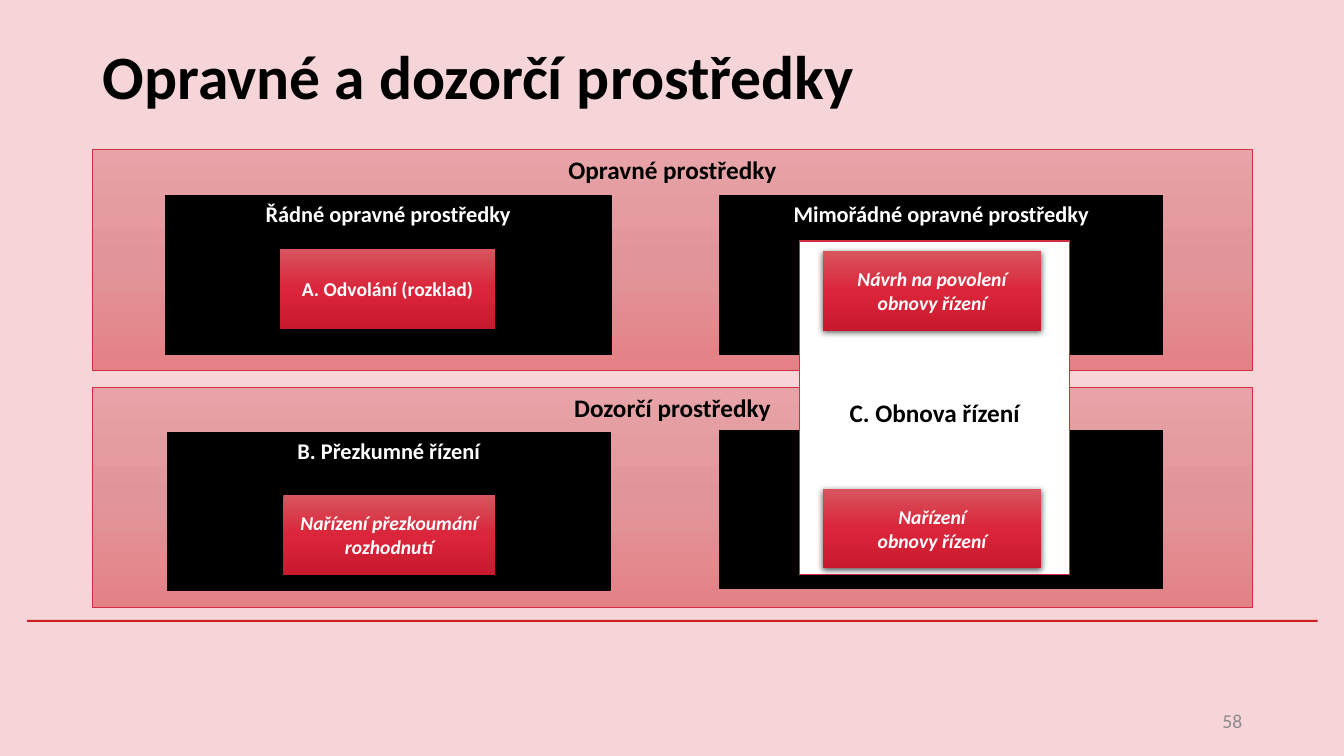
from copy import deepcopy

from lxml import etree
from pptx import Presentation
from pptx import util as u
from pptx.dml.color import RGBColor
from pptx.enum import shapes, text
from pptx.oxml import parse_xml
from pptx.oxml.ns import nsdecls, qn

COLORS = {
    "background": "F6D5D9",
    "rule": "CD1F21",
    "border": "D22D40",
    "black": "000000",
    "white": "FFFFFF",
    "number": "8C8C8C",
}
PANEL_STOPS = ("E7A3A7", "E29599", "E38186")
STEP_STOPS = ("D8555E", "DA253A", "C9192E")
PANEL_LEFT, PANEL_WIDTH, PANEL_HEIGHT = 0.92, 11.5, 2.19


def rgb(name):
    """Return the named colour."""
    return RGBColor.from_string(COLORS[name])


def inches(*lengths):
    """Convert plain numbers to lengths."""
    return [u.Inches(length) for length in lengths]


def write(shape, content, size=18, color="black", bold=True, italic=False,
          align=text.PP_ALIGN.CENTER, anchor=text.MSO_ANCHOR.TOP, wrap=True):
    """Fill a shape with formatted lines of text."""
    frame = shape.text_frame
    frame.word_wrap = wrap
    frame.vertical_anchor = anchor
    for index, line in enumerate(content.split("\n")):
        para = frame.add_paragraph() if index else frame.paragraphs[0]
        para.alignment = align
        span = para.add_run()
        span.text = line
        font = span.font
        font.name, font.size = "Calibri", u.Pt(size)
        font.bold, font.italic = bold, italic
        font.color.rgb = rgb(color)


def add_box(slide, place, fill, line=None, width=1):
    """Add a plain rectangle, optionally outlined."""
    box = slide.shapes.add_shape(shapes.MSO_SHAPE.RECTANGLE, *inches(*place))
    box.shadow.inherit = False
    box.fill.solid()
    box.fill.fore_color.rgb = rgb(fill)
    if line:
        box.line.color.rgb = rgb(line)
        box.line.width = u.Pt(width)
    else:
        box.line.fill.background()
    return box


def shade(box, stops):
    """Give a box a three-stop gradient running downwards."""
    box.fill.gradient()
    box.fill.gradient_angle = 270
    stop_list = box._element.spPr.find(".//" + qn("a:gsLst"))
    stop_list.insert(1, deepcopy(stop_list[0]))
    for index, (stop, color) in enumerate(zip(box.fill.gradient_stops, stops)):
        stop.position = index / 2
        stop.color.rgb = RGBColor.from_string(color)


def add_panel(slide, top, heading):
    """Add a wide pink panel with its heading."""
    place = (PANEL_LEFT, top, PANEL_WIDTH, PANEL_HEIGHT)
    panel = add_box(slide, place, "white", "border", 0.5)
    shade(panel, PANEL_STOPS)
    write(panel, heading)


def add_group(slide, place, heading=""):
    """Add a black box with an optional heading."""
    group = add_box(slide, place, "black", "black")
    if heading:
        write(group, heading, size=16, color="white")


def add_step(slide, left, top, width, label, italic=True):
    """Add a red box with a soft shadow below it."""
    step = add_box(slide, (left, top, width, 0.79), "rule")
    shade(step, STEP_STOPS)
    effects = step._element.spPr.find(qn("a:effectLst"))
    effects.append(parse_xml(
        f'<a:outerShdw {nsdecls("a")} blurRad="{u.Pt(4.5)}" dist="{u.Pt(1.5)}" '
        'dir="5400000" algn="ctr" rotWithShape="0"><a:srgbClr val="000000">'
        '<a:alpha val="63000"/></a:srgbClr></a:outerShdw>'))
    write(step, label, size=14, color="white", italic=italic,
          anchor=text.MSO_ANCHOR.MIDDLE, wrap=False)


def add_title(slide, content):
    """Place and format the title."""
    title = slide.shapes.title
    title.left, title.top, title.width, title.height = inches(0.92, 0.02, 11.5, 1.45)
    write(title, content, size=44, align=text.PP_ALIGN.LEFT,
          anchor=text.MSO_ANCHOR.MIDDLE)


def add_number(slide, content):
    """Add the slide number."""
    number = slide.shapes.add_textbox(*inches(9.42, 6.95, 3, 0.4))
    write(number, content, size=14, color="number", bold=False,
          align=text.PP_ALIGN.RIGHT, anchor=text.MSO_ANCHOR.MIDDLE)


def add_renewal(slide):
    """Add the white box that spans both panels."""
    renewal = add_box(slide, (7.93, 2.39, 2.68, 3.31), "white", "border")
    write(renewal, "C. Obnova řízení", anchor=text.MSO_ANCHOR.MIDDLE)
    renewal.text_frame.margin_top = u.Inches(0.14)


def main():
    """Build and save the slide."""
    deck = Presentation()
    deck.slide_width, deck.slide_height = inches(13.33, 7.5)
    slide = deck.slides.add_slide(deck.slide_layouts[5])
    slide.background.fill.solid()
    slide.background.fill.fore_color.rgb = rgb("background")

    add_title(slide, "Opravné a dozorčí prostředky")
    add_box(slide, (0.27, 6.15, 12.8, 0.02), "rule")
    add_number(slide, "58")

    add_panel(slide, 3.84, "Dozorčí prostředky")
    add_group(slide, (1.66, 4.29, 4.39, 1.57), "B. Přezkumné řízení")
    add_step(slide, 2.81, 4.91, 2.1, "Nařízení přezkoumání\nrozhodnutí")
    add_group(slide, (7.14, 4.27, 4.39, 1.57))

    add_panel(slide, 1.48, "Opravné prostředky")
    add_group(slide, (7.14, 1.94, 4.39, 1.58), "Mimořádné opravné prostředky")
    add_group(slide, (1.64, 1.94, 4.42, 1.58), "Řádné opravné prostředky")
    add_step(slide, 2.78, 2.47, 2.13, "A. Odvolání (rozklad)", italic=False)

    add_renewal(slide)
    add_step(slide, 8.16, 2.49, 2.17, "Návrh na povolení\nobnovy řízení")
    add_step(slide, 8.16, 4.85, 2.17, "Nařízení\nobnovy řízení")
    deck.save("out.pptx")


if __name__ == "__main__":
    main()
